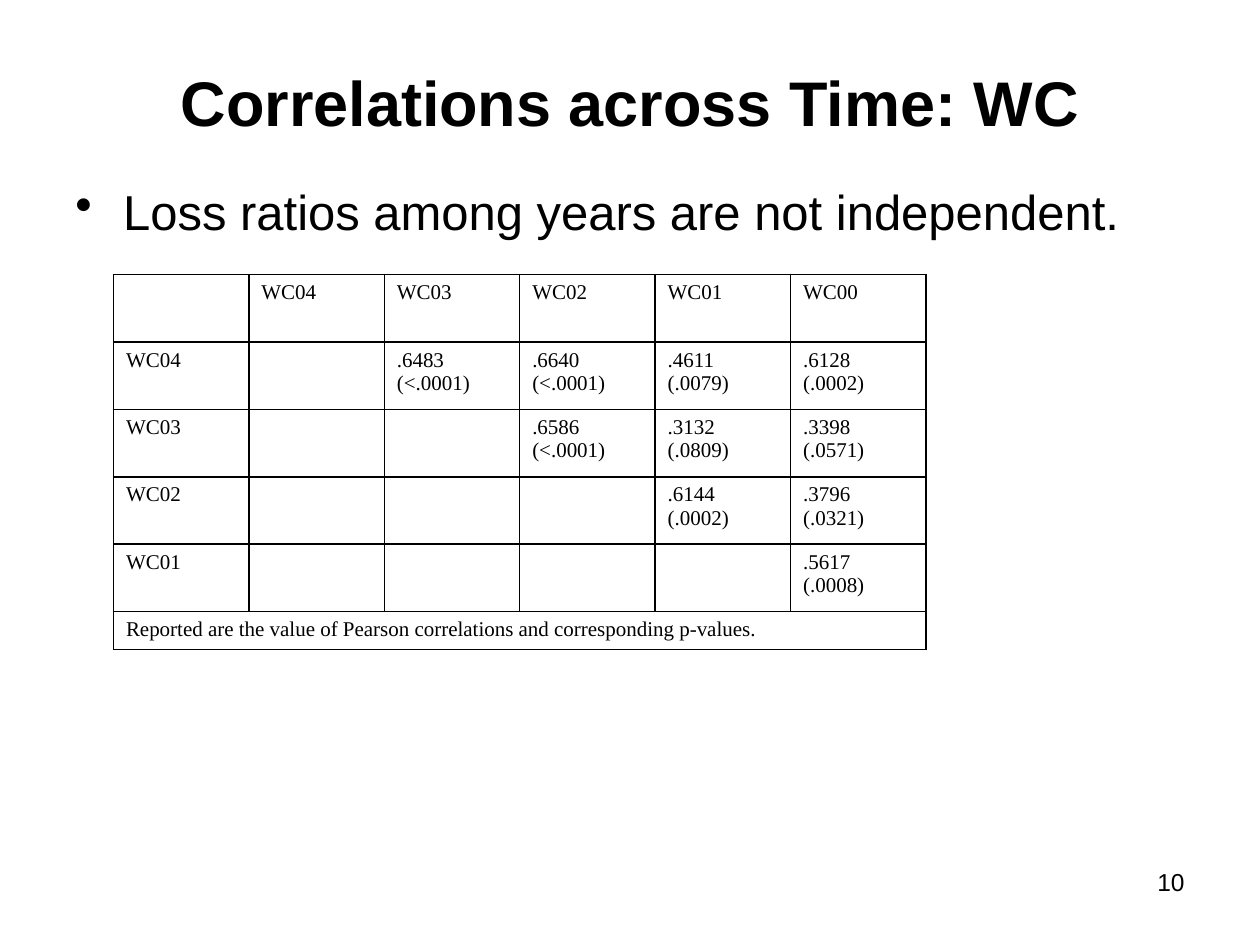
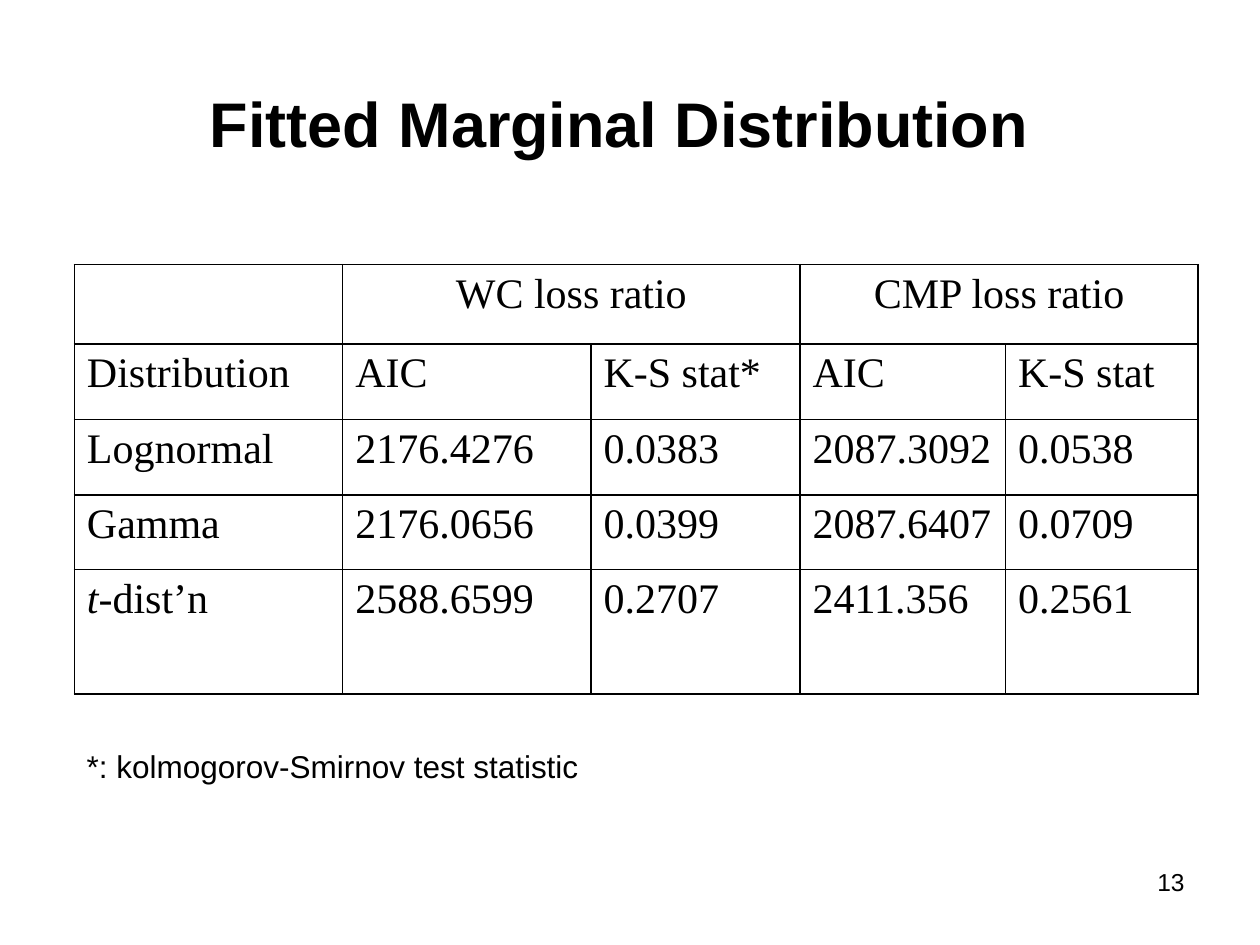
from dataclasses import dataclass

from lxml import etree
from pptx import Presentation
from pptx import util as u
from pptx.dml.color import RGBColor
from pptx.enum import text
from pptx.oxml import ns


@dataclass(frozen=True)
class Theme:
    ink: str = "000000"
    sans: str = "Arial"
    serif: str = "Times New Roman"
    title: int = 36
    title_gap: int = 44
    body: int = 28
    note: int = 18
    number: int = 14
    border: int = 1


class SlideBuilder:
    def __init__(self, deck, theme):
        self.deck = deck
        self.theme = theme
        self.slide = None

    def start(self, number):
        self.slide = self.deck.slides.add_slide(self.deck.slide_layouts[6])
        self.text(str(number), (7.17, 6.83, 2.33, 0.52), self.theme.number,
                  align=text.PP_ALIGN.RIGHT)

    def style(self, para, size, font, align=text.PP_ALIGN.LEFT):
        para.alignment = align
        para.font.size = u.Pt(size)
        para.font.name = font
        para.font.color.rgb = RGBColor.from_string(self.theme.ink)

    def text(self, words, place, size, align=text.PP_ALIGN.LEFT, before=0):
        box = self.slide.shapes.add_textbox(*map(u.Inches, place))
        box.text_frame.word_wrap = True
        para = box.text_frame.paragraphs[0]
        para.text = words
        self.style(para, size, self.theme.sans, align)
        para.space_before = u.Pt(before)
        return box

    def title(self, words, height):
        box = self.text(words, (0.5, 0.3, 9, height), self.theme.title,
                        text.PP_ALIGN.CENTER)
        box.text_frame.vertical_anchor = text.MSO_ANCHOR.MIDDLE
        para = box.text_frame.paragraphs[0]
        para.runs[0].font.bold = True
        return para

    def bullet(self, words, place):
        box = self.text(words, place, self.theme.body, before=5.6)
        props = box.text_frame.paragraphs[0]._p.get_or_add_pPr()
        indent = u.Inches(0.38)
        props.set("marL", str(indent))
        props.set("indent", str(-indent))
        mark = etree.Element(ns.qn("a:buChar"), char="•")
        props.find(ns.qn("a:spcBef")).addnext(mark)

    def outline(self, cell):
        props = cell._tc.get_or_add_tcPr()
        for side in ("lnL", "lnR", "lnT", "lnB"):
            line = etree.SubElement(props, ns.qn("a:" + side),
                                    w=str(u.Pt(self.theme.border)))
            fill = etree.SubElement(line, ns.qn("a:solidFill"))
            etree.SubElement(fill, ns.qn("a:srgbClr"), val=self.theme.ink)
        cell.fill.background()

    def table(self, rows, left, top, widths, heights, size, spans):
        frame = self.slide.shapes.add_table(
            len(heights), len(widths), u.Inches(left), u.Inches(top),
            u.Inches(sum(widths)), u.Inches(sum(heights)))
        table = frame.table
        table.first_row = table.horz_banding = False
        for column, width in zip(table.columns, widths):
            column.width = u.Inches(width)
        for row, height in zip(table.rows, heights):
            row.height = u.Inches(height)
        for row, values in enumerate(rows):
            for column, value in enumerate(values):
                cell = table.cell(row, column)
                cell.text_frame.text = value
                for para in cell.text_frame.paragraphs:
                    self.style(para, size, self.theme.serif)
                self.outline(cell)
        for row, first, last in spans:
            table.cell(row, first).merge(table.cell(row, last))
        return table


def correlations_slide(page):
    page.start(10)
    page.title("Correlations across Time: WC", 1.01)
    page.bullet("Loss ratios among years are not independent.",
                (0.5, 1.39, 9.23, 5.32))
    years = ["WC04", "WC03", "WC02", "WC01", "WC00"]
    correlations = [
        [(".6483", "<.0001"), (".6640", "<.0001"), (".4611", ".0079"), (".6128", ".0002")],
        [(".6586", "<.0001"), (".3132", ".0809"), (".3398", ".0571")],
        [(".6144", ".0002"), (".3796", ".0321")],
        [(".5617", ".0008")],
    ]
    rows = [[""] + years]
    for index, (year, pairs) in enumerate(zip(years, correlations)):
        values = [f"{value}\n({chance})" for value, chance in pairs]
        rows.append([year] + [""] * (index + 1) + values)
    note = "Reported are the value of Pearson correlations and corresponding p-values."
    rows.append([note] + [""] * len(years))
    page.table(rows, 0.9, 2.18, [1.075] * 6, [0.535] * 5 + [0.28], 12, [(5, 0, 5)])


def distribution_slide(page):
    page.start(13)
    gap = page.title("Fitted Marginal Distribution", 1.25).add_run()
    gap.text = " "
    gap.font.size = u.Pt(page.theme.title_gap)
    rows = [
        ["", "WC loss ratio", "", "CMP loss ratio", ""],
        ["Distribution", "AIC", "K-S stat*", "AIC", "K-S stat"],
        ["Lognormal", "2176.4276", "0.0383", "2087.3092", "0.0538"],
        ["Gamma", "2176.0656", "0.0399", "2087.6407", "0.0709"],
        ["t", "2588.6599", "0.2707", "2411.356", "0.2561"],
    ]
    table = page.table(rows, 0.59, 2.1, [2.13, 1.97, 1.66, 1.63, 1.53],
                       [0.63, 0.6, 0.6, 0.59, 0.99], 24, [(0, 1, 2), (0, 3, 4)])
    for column in (1, 3):
        heading = table.cell(0, column).text_frame.paragraphs[0]
        heading.alignment = text.PP_ALIGN.CENTER
    t_name = table.cell(4, 0).text_frame.paragraphs[0]
    t_name.runs[0].font.italic = True
    t_name.add_run().text = "-dist’n"
    page.text("*: kolmogorov-Smirnov test statistic", (0.59, 5.88, 5.04, 0.4),
              page.theme.note)


def main():
    deck = Presentation()
    deck.slide_width = u.Inches(10)
    deck.slide_height = u.Inches(7.5)
    page = SlideBuilder(deck, Theme())
    correlations_slide(page)
    distribution_slide(page)
    deck.save("out.pptx")


if __name__ == "__main__":
    main()
